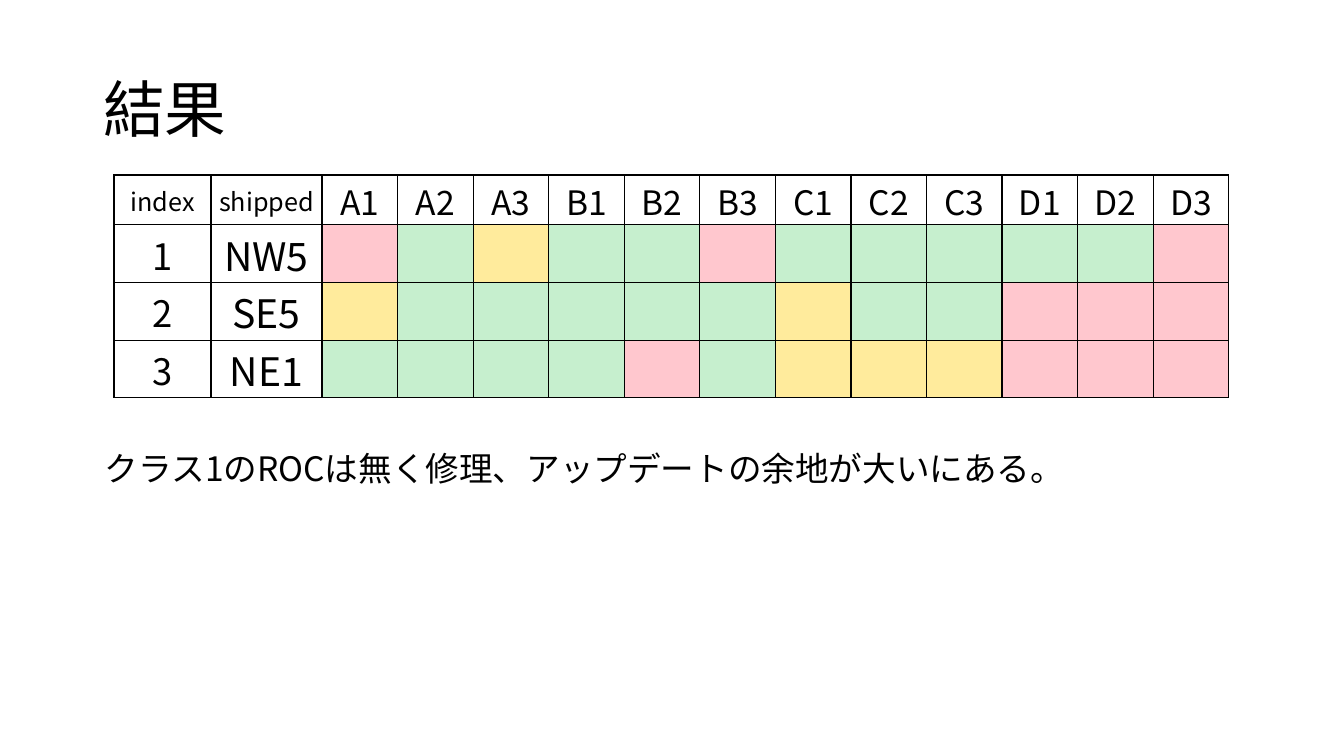
from dataclasses import dataclass

from lxml.etree import SubElement
from pptx import Presentation
from pptx.dml.color import RGBColor
from pptx.enum.text import MSO_ANCHOR, PP_ALIGN
from pptx.oxml.ns import qn
from pptx.util import Emu, Pt

TITLE = "結果"
NOTE = "クラス1のROCは無く修理、アップデートの余地が大いにある。"
LABEL_HEADERS = ["index", "shipped"]
TEST_HEADERS = [group + number for group in "ABCD" for number in "123"]
RESULTS = [
    ("1", "NW5", "RGYGGRGGGGGR"),
    ("2", "SE5", "YGGGGGYGGRRR"),
    ("3", "NE1", "GGGGRGYYYRRR"),
]

SLIDE_SIZE = (1344, 756)
TITLE_BOX = (93, 40, 1159, 146)
NOTE_BOX = (95, 443, 1016, 50)
TABLE_BOX = (114, 175, 1115, 220)
LABEL_WIDTHS = [97, 111]
HEADER_HEIGHT = 49
CELL_MARGIN = 1


@dataclass(frozen=True)
class Theme:
    font: str = "Noto Sans CJK JP"
    ink: str = "000000"
    red: str = "FFC7CE"
    green: str = "C6EFCE"
    yellow: str = "FFEB9C"
    title: int = 44
    note: int = 24
    label_header: int = 18
    test_header: int = 24
    index: int = 26
    shipped: int = 28
    border: int = 1


THEME = Theme()
RESULT_COLOURS = {"R": THEME.red, "G": THEME.green, "Y": THEME.yellow}


def px(length):
    return Emu(round(length * 914400 / 100.8))


def place(shape, box):
    shape.left, shape.top, shape.width, shape.height = map(px, box)


def write(text_frame, text, size, alignment=PP_ALIGN.LEFT):
    paragraph = text_frame.paragraphs[0]
    paragraph.alignment = alignment
    run = paragraph.add_run()
    run.text = text
    run.font.size = Pt(size)
    run.font.name = THEME.font
    run.font.color.rgb = RGBColor.from_string(THEME.ink)
    SubElement(run.font._element, qn("a:ea"), typeface=THEME.font)
    return paragraph


def add_borders(cell):
    properties = cell._tc.get_or_add_tcPr()
    for side in ("lnL", "lnR", "lnT", "lnB"):
        line = SubElement(properties, qn(f"a:{side}"), w=str(Pt(THEME.border)))
        fill = SubElement(line, qn("a:solidFill"))
        SubElement(fill, qn("a:srgbClr"), val=THEME.ink)


def format_cell(cell, text="", size=THEME.label_header, colour=None):
    cell.vertical_anchor = MSO_ANCHOR.MIDDLE
    cell.margin_left = cell.margin_right = cell.margin_top = px(CELL_MARGIN)
    cell.margin_bottom = 0
    add_borders(cell)
    if colour:
        cell.fill.solid()
        cell.fill.fore_color.rgb = RGBColor.from_string(colour)
    else:
        cell.fill.background()
    if text:
        write(cell.text_frame, text, size, PP_ALIGN.CENTER)


def add_results_table(slide):
    column_count = len(LABEL_HEADERS) + len(TEST_HEADERS)
    frame = slide.shapes.add_table(len(RESULTS) + 1, column_count, *map(px, TABLE_BOX))
    table = frame.table
    table.first_row = False
    table.horz_banding = False

    test_width = (TABLE_BOX[2] - sum(LABEL_WIDTHS)) / len(TEST_HEADERS)
    widths = LABEL_WIDTHS + [test_width] * len(TEST_HEADERS)
    for column, width in zip(table.columns, widths):
        column.width = px(width)
    result_height = (TABLE_BOX[3] - HEADER_HEIGHT) / len(RESULTS)
    heights = [HEADER_HEIGHT] + [result_height] * len(RESULTS)
    for row, height in zip(table.rows, heights):
        row.height = px(height)

    header = [(text, THEME.label_header) for text in LABEL_HEADERS]
    header += [(text, THEME.test_header) for text in TEST_HEADERS]
    for column, (text, size) in enumerate(header):
        format_cell(table.cell(0, column), text, size)
    for row, (index, shipped, grades) in enumerate(RESULTS, 1):
        format_cell(table.cell(row, 0), index, THEME.index)
        format_cell(table.cell(row, 1), shipped, THEME.shipped)
        for column, grade in enumerate(grades, len(LABEL_HEADERS)):
            format_cell(table.cell(row, column), colour=RESULT_COLOURS[grade])


def main():
    presentation = Presentation()
    presentation.slide_width, presentation.slide_height = map(px, SLIDE_SIZE)
    slide = presentation.slides.add_slide(presentation.slide_layouts[5])

    title = slide.shapes.title
    place(title, TITLE_BOX)
    title.text_frame.vertical_anchor = MSO_ANCHOR.MIDDLE
    write(title.text_frame, TITLE, THEME.title).line_spacing = 0.9

    add_results_table(slide)

    note = slide.shapes.add_textbox(*map(px, NOTE_BOX))
    note.text_frame.word_wrap = True
    write(note.text_frame, NOTE, THEME.note)

    presentation.save("out.pptx")


if __name__ == "__main__":
    main()
